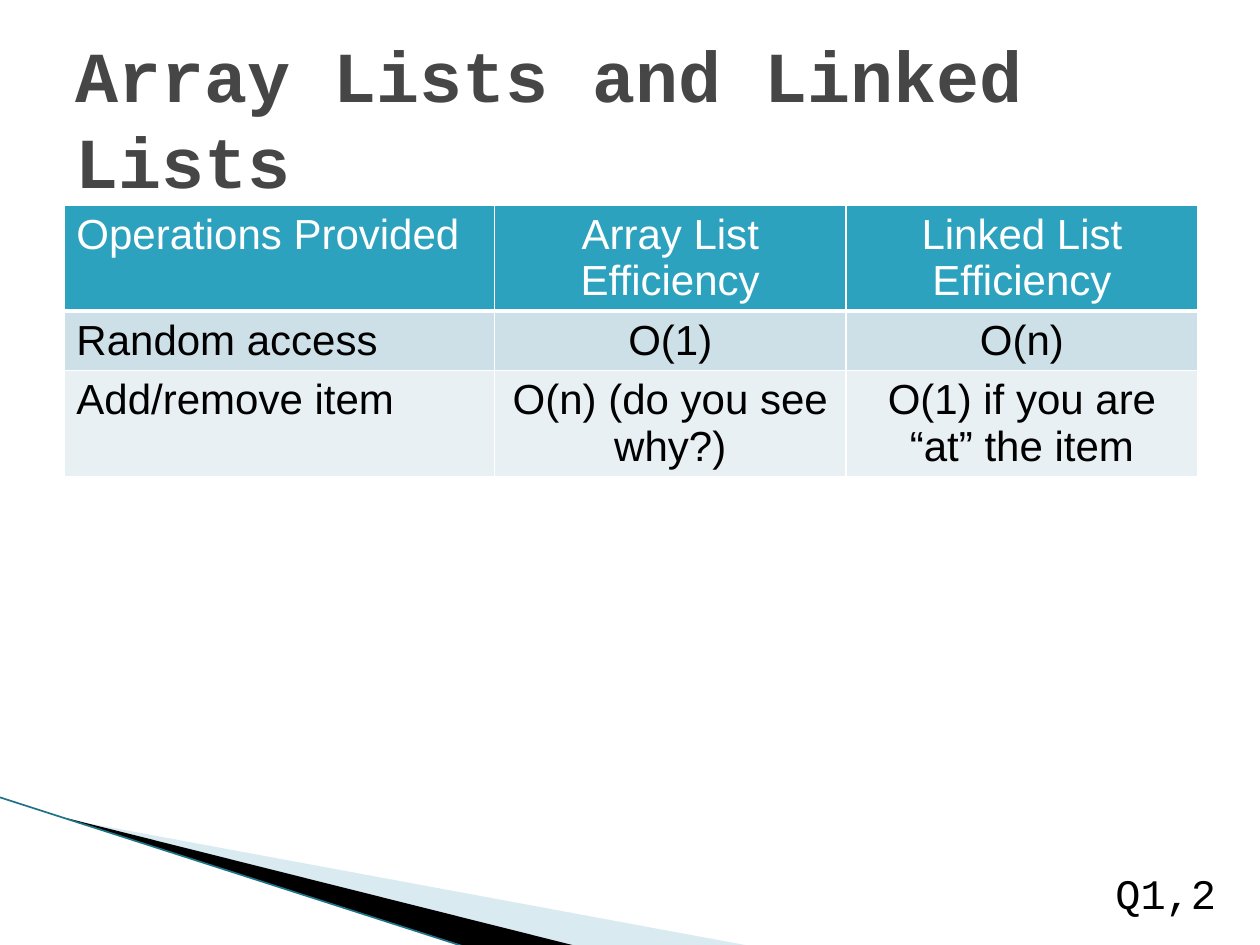
from lxml.etree import SubElement
from pptx import Presentation
from pptx.dml.color import RGBColor
from pptx.enum.text import MSO_ANCHOR as Anchor, MSO_AUTO_SIZE as Fit, PP_ALIGN as Align
from pptx.oxml.ns import qn
from pptx.util import Pt

SANS, MONO = "Arial", "Courier New"
ROWS = [
    ("Operations Provided", "Array List Efficiency", "Linked List Efficiency"),
    ("Random access", "O(1)", "O(n)"),
    ("Add/remove item", "O(n) (do you see why?)", "O(1) if you are “at” the item"),
]
FILLS = ["2DA2BF", "CDE0E8", "E8F0F4"]
WIDTHS = [246, 201, 201]
HEIGHTS = [60, 34, 60]


def rgb(code):
    return RGBColor.from_string(code)


def place(shape, *box):
    shape.left, shape.top, shape.width, shape.height = map(Pt, box)


def write(frame, text, font, size, color, align=Align.LEFT, bold=False):
    para = frame.paragraphs[0]
    para.alignment = align
    run = para.add_run()
    run.text = text
    run.font.name, run.font.size, run.font.bold = font, Pt(size), bold
    run.font.color.rgb = rgb(color)


def add_wedge(slide, points, color, alpha=100):
    """Draw a filled outline without a border; alpha is opacity in percent."""
    start, *rest = [(Pt(x), Pt(y)) for x, y in points]
    pen = slide.shapes.build_freeform(*start)
    pen.add_line_segments(rest)
    wedge = pen.convert_to_shape()
    wedge.shadow.inherit = False
    wedge.line.fill.background()
    wedge.fill.solid()
    wedge.fill.fore_color.rgb = rgb(color)
    if alpha < 100:
        tone = wedge._element.spPr.find(".//" + qn("a:srgbClr"))
        SubElement(tone, qn("a:alpha"), val=str(alpha * 1000))


def add_line(slide, ends, color, width):
    line = slide.shapes.add_connector(1, *map(Pt, ends))
    line.line.color.rgb = rgb(color)
    line.line.width = Pt(width)
    SubElement(line._element.spPr, qn("a:effectLst"))


def edge(cell, base):
    """Give a cell white borders; base is the width of the lower one."""
    props = cell._tc.get_or_add_tcPr()
    for side, width in zip("LRTB", (1, 1, 1, base)):
        line = SubElement(props, qn("a:ln" + side), w=str(Pt(width)))
        fill = SubElement(line, qn("a:solidFill"))
        SubElement(fill, qn("a:srgbClr"), val="FFFFFF")


def add_grid(slide):
    box = map(Pt, (36.5, 117, sum(WIDTHS), sum(HEIGHTS)))
    grid = slide.shapes.add_table(len(ROWS), len(WIDTHS), *box).table
    for col, width in zip(grid.columns, WIDTHS):
        col.width = Pt(width)
    for r, texts in enumerate(ROWS):
        grid.rows[r].height = Pt(HEIGHTS[r])
        for c, text in enumerate(texts):
            cell = grid.cell(r, c)
            edge(cell, 1 if r else 3)
            cell.fill.solid()
            cell.fill.fore_color.rgb = rgb(FILLS[r])
            write(cell.text_frame, text, SANS, 24, "000000" if r else "FFFFFF",
                  Align.CENTER if c else Align.LEFT)


def add_title(slide):
    title = slide.shapes.title
    place(title, 36, 21.6, 648, 90)
    frame = title.text_frame
    frame.word_wrap, frame.auto_size = True, Fit.NONE
    frame.vertical_anchor = Anchor.MIDDLE
    write(frame, "Array Lists and Linked Lists", MONO, 41, "464646", bold=True)


def add_note(slide):
    note = slide.shapes.add_textbox(*map(Pt, (630, 492, 72, 36.5)))
    frame = note.text_frame
    frame.word_wrap, frame.auto_size = True, Fit.SHAPE_TO_FIT_TEXT
    write(frame, "Q1,2", MONO, 24, "000000", Align.RIGHT)


def main():
    deck = Presentation()
    deck.slide_width, deck.slide_height = Pt(720), Pt(540)
    slide = deck.slides.add_slide(deck.slide_layouts[5])
    add_wedge(slide, [(39.6, 468.5), (428.4, 540.5), (328.5, 540.5), (39.6, 468)],
              "A0CBDC", 40)
    add_wedge(slide, [(38, 467.5), (329, 540.5), (268, 541.5), (39, 468)], "000000")
    add_line(slide, (-0.5, 455.5, 267, 541.5), "1F7387", 0.95)
    add_grid(slide)
    add_title(slide)
    add_note(slide)
    deck.save("out.pptx")


if __name__ == "__main__":
    main()
